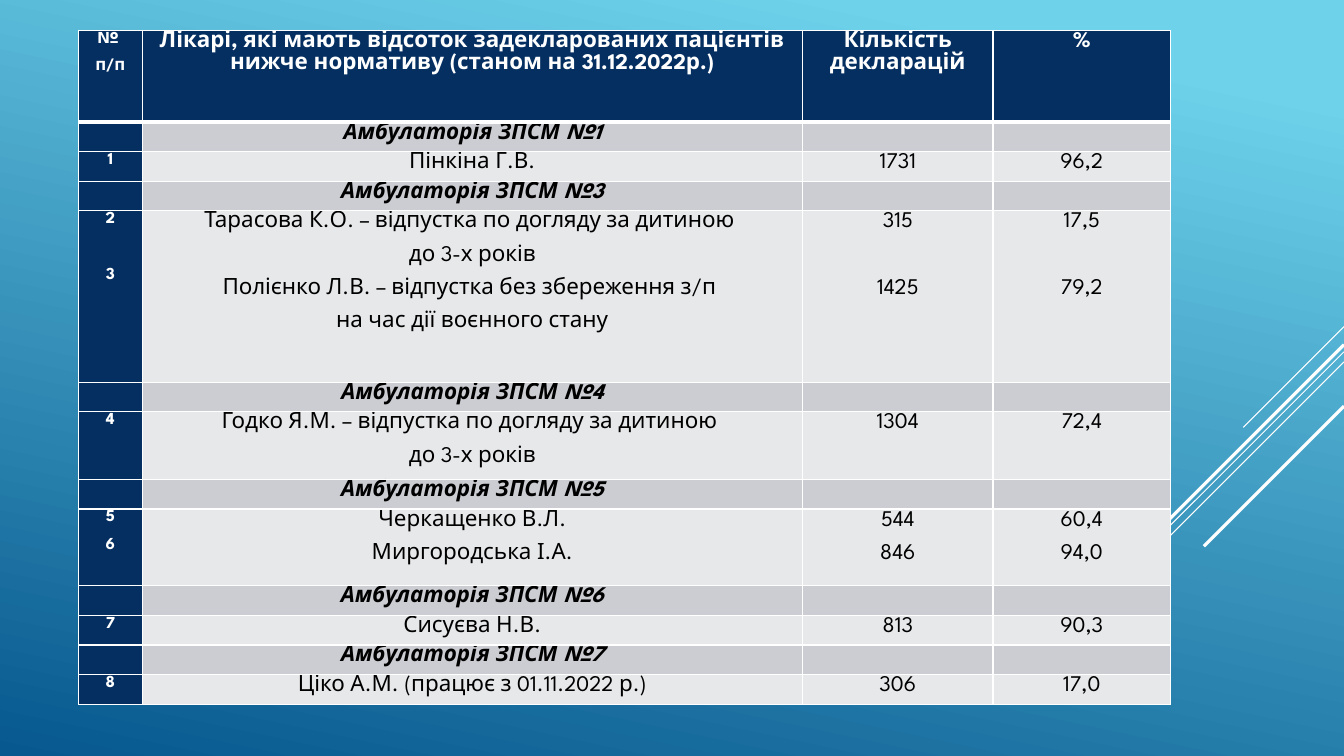
from lxml import etree
from pptx import Presentation
from pptx.dml.color import RGBColor
from pptx.enum.shapes import MSO_CONNECTOR
from pptx.enum.text import PP_ALIGN
from pptx.oxml.ns import qn
from pptx.util import Inches, Pt

LINE = MSO_CONNECTOR.STRAIGHT
CENTER = PP_ALIGN.CENTER

WHITE = RGBColor(0xFF, 0xFF, 0xFF)
BLACK = RGBColor(0, 0, 0)
NAVY = RGBColor(0x05, 0x2F, 0x61)
BAND = RGBColor(0xCC, 0xCD, 0xD2)
PALE = RGBColor(0xE7, 0xE8, 0xEA)
SKY = RGBColor(0x6E, 0xD2, 0xEB)
DEEP = RGBColor(0x06, 0x58, 0x8E)
FONT = "League Spartan"

# Content: header, then each clinic with its groups of doctors
HEAD = (
    ["№ ", "п/п"],
    ["Лікарі, які мають відсоток задекларованих пацієнтів "
     "нижче нормативу (станом на 31.12.2022р.)"],
    ["Кількість декларацій"],
    ["%"],
)
CLINICS = [
    ("Амбулаторія ЗПСМ №1", (["1"], ["Пінкіна Г.В."], ["1731"], ["96,2"])),
    ("Амбулаторія ЗПСМ №3", (
        ["2", "3"],
        ["Тарасова К.О. – відпустка по догляду за дитиною ", "до 3-х років",
         "Полієнко Л.В. – відпустка без збереження з/п ",
         "на час дії воєнного стану"],
        ["315", "1425"], ["17,5", "79,2"])),
    ("Амбулаторія ЗПСМ №4", (
        ["4"],
        ["Годко Я.М. – відпустка по догляду за дитиною ", "до 3-х років"],
        ["1304"], ["72,4"])),
    ("Амбулаторія ЗПСМ №5", (
        ["5", "6"], ["Черкащенко В.Л.", "Миргородська І.А."],
        ["544", "846"], ["60,4", "94,0"])),
    ("Амбулаторія ЗПСМ №6", (["7"], ["Сисуєва Н.В."], ["813"], ["90,3"])),
    ("Амбулаторія ЗПСМ №7", (
        ["8"], ["Ціко А.М. (працює з 01.11.2022 р.)"], ["306"], ["17,0"])),
]
COLS = [0.63, 6.55, 1.89, 1.76]
LEFT, TOP, WIDTH, HEIGHT = 0.78, 0.3, 10.82, 6.69
TALL = {0: 0.91, 4: 1.7, 6: 0.67, 8: 0.76}

# Diagonal lines run at 45 degrees from the right edge: top, run, weight
RAYS = [(3.24, 1, 0.75), (3.49, 3.26, 0.75), (3.59, 2.07, 0.75),
        (3.42, 1.91, 2.25), (4.03, 1.39, 2.25)]
EDGE = 13.33


def write(cell, texts, size, color, bold, slant, skip):
    """Fill a cell; skip leaves one line free between paragraphs."""
    cell.margin_left = cell.margin_right = Inches(0.06)
    cell.margin_top = cell.margin_bottom = 0
    frame = cell.text_frame
    for i, text in enumerate(texts):
        para = frame.add_paragraph() if i else frame.paragraphs[0]
        para.alignment = CENTER
        para.line_spacing = 1.07
        para.space_after = Pt(8)
        if i and skip:
            para.space_before = Pt(size * 0.98 + 8)
        run = para.add_run()
        run.text = text
        font = run.font
        font.name, font.size = FONT, Pt(size)
        font.bold, font.italic = bold, slant
        font.color.rgb = color
    if not texts:
        # Small end mark keeps an empty row low
        end = etree.SubElement(frame.paragraphs[0]._p, qn("a:endParaRPr"))
        end.set("sz", "1200")


def border(cell, row):
    thick = {"a:lnB": 0, "a:lnT": 1}
    props = cell._tc.get_or_add_tcPr()
    for tag in ("a:lnL", "a:lnR", "a:lnT", "a:lnB"):
        width = 3 if thick.get(tag) == row else 1
        line = etree.SubElement(props, qn(tag), w=str(Pt(width)))
        fill = etree.SubElement(line, qn("a:solidFill"))
        etree.SubElement(fill, qn("a:srgbClr"), val=str(WHITE))


def main():
    deck = Presentation()
    deck.slide_width, deck.slide_height = Inches(EDGE), Inches(7.5)
    slide = deck.slides.add_slide(deck.slide_layouts[6])

    # Background
    back = slide.background.fill
    back.gradient()
    back.gradient_angle = 360 - 102
    for stop, color, place in zip(back.gradient_stops, (SKY, DEEP), (0.1, 1)):
        stop.color.rgb = color
        stop.position = place

    # Diagonal lines
    for top, run, weight in RAYS:
        ray = slide.shapes.add_connector(
            LINE, Inches(EDGE), Inches(top),
            Inches(EDGE - run), Inches(top + run))
        ray.line.color.rgb = WHITE
        ray.line.width = Pt(weight)
        etree.SubElement(ray._element.spPr, qn("a:effectLst"))

    # Table grid: low rows share the height left by the tall ones
    rows = [HEAD]
    for name, group in CLINICS:
        rows += [([], [name], [], []), group]
    low = (HEIGHT - sum(TALL.values())) / (len(rows) - len(TALL))
    table = slide.shapes.add_table(
        len(rows), len(COLS), Inches(LEFT), Inches(TOP),
        Inches(WIDTH), Inches(HEIGHT)).table
    for col, width in zip(table.columns, COLS):
        col.width = Inches(width)

    # Table cells
    for r, row in enumerate(rows):
        table.rows[r].height = Inches(TALL.get(r, low))
        title = r % 2 == 1
        for c, texts in enumerate(row):
            cell = table.cell(r, c)
            dark = r == 0 or c == 0
            skip = r == 4 and c != 1
            write(cell, texts, 12 if c == 0 else 16,
                  WHITE if dark else BLACK, dark or title, title, skip)
            border(cell, r)
            cell.fill.solid()
            cell.fill.fore_color.rgb = NAVY if dark else BAND if title else PALE

    deck.save("out.pptx")


if __name__ == "__main__":
    main()
